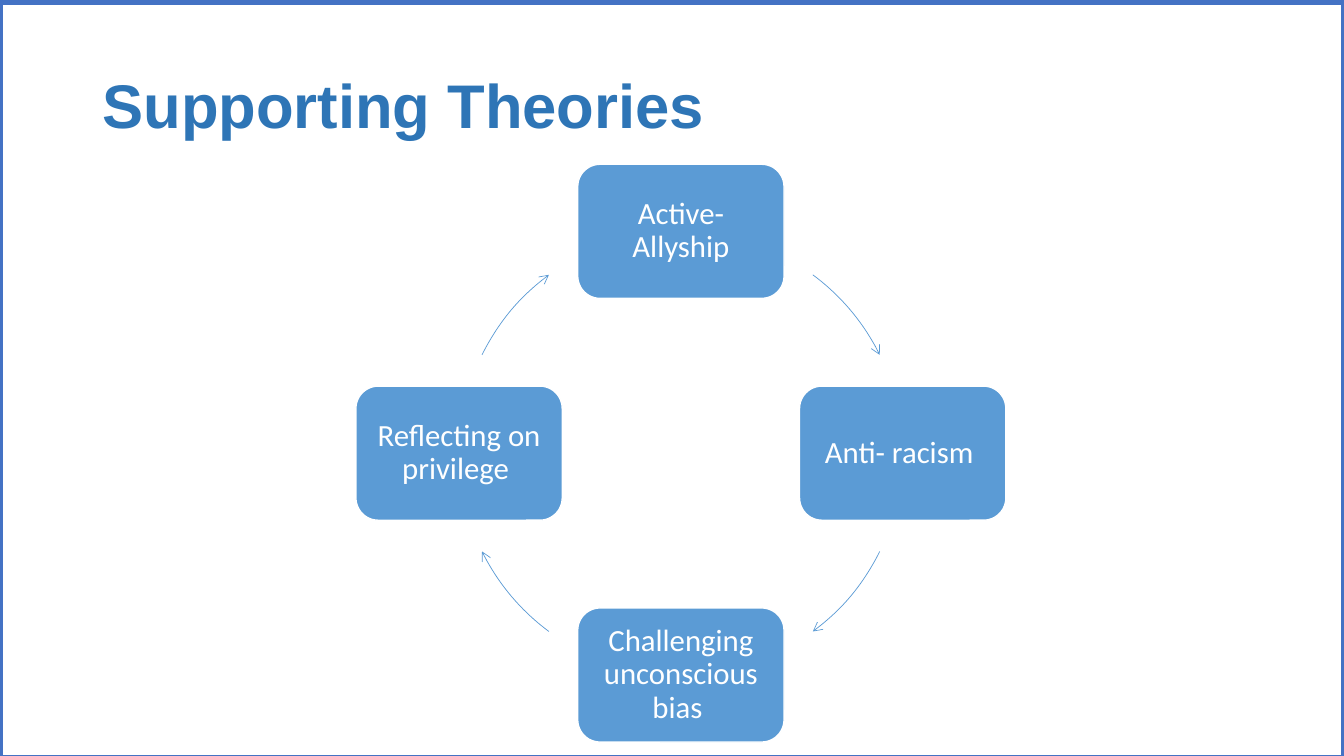
from math import cos, radians, sin
from lxml.etree import SubElement
from pptx import Presentation
from pptx.dml.color import RGBColor as Rgb
from pptx.enum.shapes import MSO_SHAPE as Kind
from pptx.enum.text import MSO_ANCHOR as Anchor, PP_ALIGN as Align
from pptx.oxml.ns import qn
from pptx.util import Cm, Pt

HUES = {"frame": "4472C4", "title": "2E75B6", "box": "5B9BD5", "white": "FFFFFF"}
WIDE, HIGH = 33.87, 19.05
MID_X, MID_Y, RADIUS = 17.16, 11.42, 5.59
BOX_W, BOX_H = 5.2, 3.38
STEPS = [
    ("Active-Allyship", 270, 306.5),
    ("Anti- racism ", 0, 26.3),
    ("Challenging unconscious bias ", 90, 126.5),
    ("Reflecting on privilege ", 180, 206.3),
]
SWEEP = 27.2


class Deck:
    """Holds the style and the current slide."""

    def __init__(self):
        self.prs = Presentation()
        self.prs.slide_width, self.prs.slide_height = Cm(WIDE), Cm(HIGH)
        self.slide = self.prs.slides.add_slide(self.prs.slide_layouts[5])
        self.shapes = self.slide.shapes

    def hue(self, name):
        return Rgb.from_string(HUES[name])

    def shape(self, kind, x, y, w, h, line, width, fill=None):
        item = self.shapes.add_shape(kind, Cm(x), Cm(y), Cm(w), Cm(h))
        item.shadow.inherit = False
        item.line.color.rgb = self.hue(line)
        item.line.width = Pt(width)
        if fill:
            item.fill.solid()
            item.fill.fore_color.rgb = self.hue(fill)
        else:
            item.fill.background()
        return item

    def text(self, frame, words, size, font, hue, align, bold=False):
        frame.word_wrap = True
        frame.vertical_anchor = Anchor.MIDDLE
        para = frame.paragraphs[0]
        para.alignment, para.line_spacing = align, 0.9
        run = para.add_run()
        run.text = words
        run.font.size, run.font.name, run.font.bold = Pt(size), font, bold
        run.font.color.rgb = self.hue(hue)

    def title(self, words):
        item = self.slide.shapes.title
        item.left, item.top = Cm(2.33), Cm(0.89)
        item.width, item.height = Cm(29.21), Cm(3.68)
        self.text(item.text_frame, words, 44, "Arial", "title", Align.LEFT, True)

    def group(self):
        self.shapes = self.slide.shapes.add_group_shape().shapes

    def box(self, words, angle):
        x = MID_X + RADIUS * cos(radians(angle)) - BOX_W / 2
        y = MID_Y + RADIUS * sin(radians(angle)) - BOX_H / 2
        item = self.shape(Kind.ROUNDED_RECTANGLE, x, y, BOX_W, BOX_H, "white", 1, "box")
        frame = item.text_frame
        frame.margin_left = frame.margin_right = Cm(0.23)
        frame.margin_top = frame.margin_bottom = Cm(0.23)
        self.text(frame, words, 22, "Calibri", "white", Align.CENTER)

    def arc(self, start):
        item = self.shape(Kind.ARC, MID_X - RADIUS, MID_Y - RADIUS,
                          2 * RADIUS, 2 * RADIUS, "box", 0.5)
        for i, angle in enumerate((start, start + SWEEP)):
            item.adjustments[i] = angle * 0.6
        line = item.element.spPr.find(qn("a:ln"))
        SubElement(line, qn("a:tailEnd"), type="arrow")


def main():
    deck = Deck()
    deck.shape(Kind.RECTANGLE, 0, 0.05, WIDE, HIGH, "frame", 4.5)
    deck.title("Supporting Theories")
    deck.group()
    for words, angle, start in STEPS:
        deck.box(words, angle)
        deck.arc(start)
    deck.prs.save("out.pptx")


if __name__ == "__main__":
    main()
